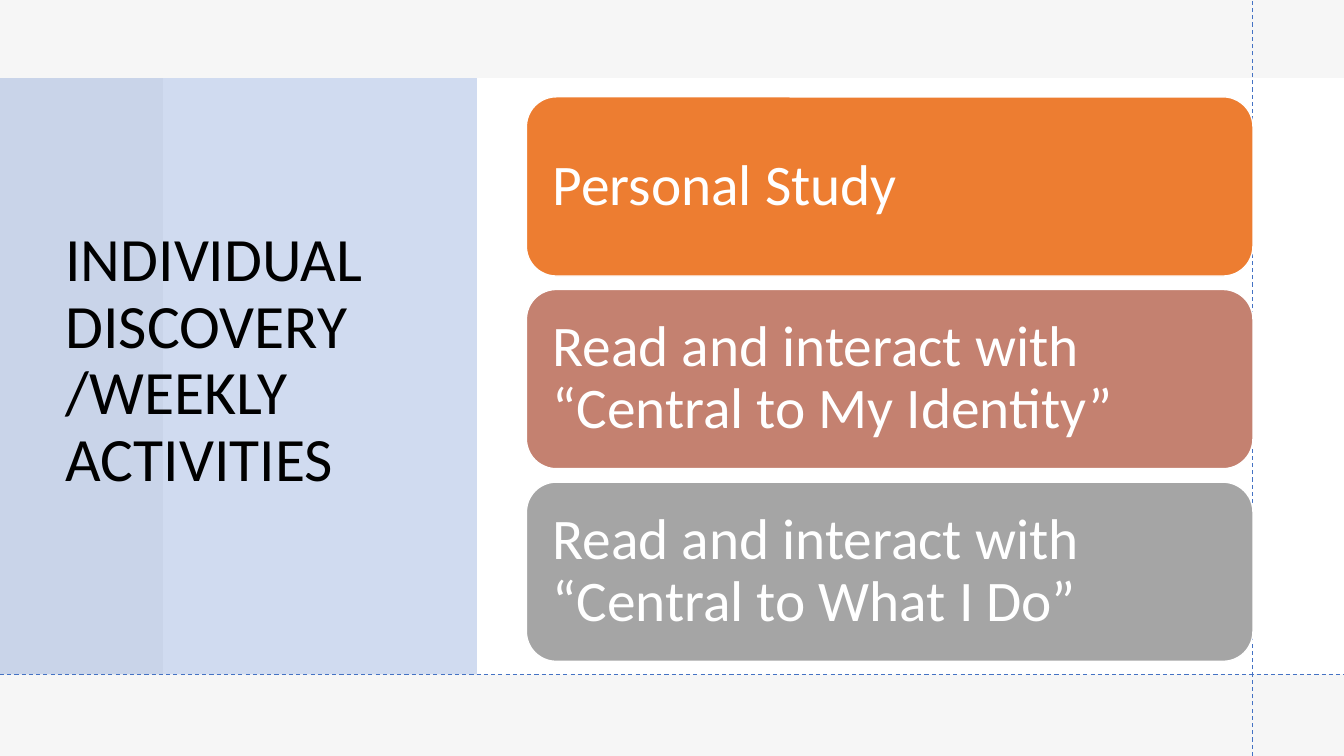
"""Build the weekly activities slide with a side title and three cards."""
import pptx
import pptx.util
import pptx.dml.color
import pptx.enum.dml
import pptx.enum.shapes
import pptx.enum.text
import pptx.oxml.ns
import lxml.etree

Pt = pptx.util.Pt
RGBColor = pptx.dml.color.RGBColor
SHAPES = pptx.enum.shapes.MSO_SHAPE

WHITE = RGBColor(0xFF, 0xFF, 0xFF)
BLACK = RGBColor(0x00, 0x00, 0x00)
PALE = RGBColor(0xE7, 0xE6, 0xE6)
BLUE = RGBColor(0x44, 0x72, 0xC4)
ORANGE = RGBColor(0xED, 0x7D, 0x31)
ROSE = RGBColor(0xC4, 0x81, 0x70)
GREY = RGBColor(0xA5, 0xA5, 0xA5)

WIDTH, HEIGHT = 960, 540
TITLE = "INDIVIDUAL DISCOVERY\v/WEEKLY ACTIVITIES"
TITLE_BOX = (39.6, 53.3, 284.4, 409.7)
PANELS = [
    ((0, 0, WIDTH, HEIGHT), WHITE, 100),
    ((0, 0, WIDTH, HEIGHT), PALE, 35),
    ((116.6, 55.8, 843.4, 426), WHITE, 100),
    ((0, 55.8, 340.6, 426), BLUE, 25),
]
GUIDES = [(894.7, HEIGHT, 894.7, 0), (0, 481.7, WIDTH, 481.7)]
CARDS = [
    ("Personal Study", ORANGE),
    ("Read and interact with “Central to My Identity”", ROSE),
    ("Read and interact with “Central to What I Do”", GREY),
]
CARD_LEFT, CARD_TOP, CARD_WIDTH, CARD_HEIGHT = 376, 69.2, 519, 128
CARD_PITCH = 137.6


def write(shape, text, size, color, inset_x, inset_y):
    """Put left-aligned, vertically centred text into a shape."""
    frame = shape.text_frame
    frame.word_wrap = True
    frame.auto_size = pptx.enum.text.MSO_AUTO_SIZE.NONE
    frame.vertical_anchor = pptx.enum.text.MSO_ANCHOR.MIDDLE
    frame.margin_left = frame.margin_right = Pt(inset_x)
    frame.margin_top = frame.margin_bottom = Pt(inset_y)
    para = frame.paragraphs[0]
    para.text = text
    para.alignment = pptx.enum.text.PP_ALIGN.LEFT
    para.line_spacing = 0.9
    for span in para.runs:
        span.font.name = "Calibri"
        span.font.size = Pt(size)
        span.font.color.rgb = color


def add_block(page, kind, place, color, opacity=100):
    """Add a filled shape without line or shadow."""
    block = page.shapes.add_shape(kind, *map(Pt, place))
    block.shadow.inherit = False
    block.line.fill.background()
    block.fill.solid()
    block.fill.fore_color.rgb = color
    if opacity < 100:
        tone = block.element.spPr.find(".//" + pptx.oxml.ns.qn("a:srgbClr"))
        alpha = lxml.etree.SubElement(tone, pptx.oxml.ns.qn("a:alpha"))
        alpha.set("val", str(opacity * 1000))
    return block


def add_guide(page, ends):
    """Add a thin dashed line."""
    guide = page.shapes.add_connector(
        pptx.enum.shapes.MSO_CONNECTOR.STRAIGHT, *map(Pt, ends))
    guide.line.color.rgb = BLUE
    guide.line.width = Pt(0.75)
    guide.line.dash_style = pptx.enum.dml.MSO_LINE.DASH
    lxml.etree.SubElement(guide.element.spPr, pptx.oxml.ns.qn("a:effectLst"))


def main():
    """Assemble the slide and save it."""
    deck = pptx.Presentation()
    deck.slide_width, deck.slide_height = Pt(WIDTH), Pt(HEIGHT)
    page = deck.slides.add_slide(deck.slide_layouts.get_by_name("Title Only"))
    page.background.fill.solid()
    page.background.fill.fore_color.rgb = PALE

    for place, color, opacity in PANELS:
        add_block(page, SHAPES.RECTANGLE, place, color, opacity)

    title = page.shapes.title
    title.left, title.top, title.width, title.height = map(Pt, TITLE_BOX)
    write(title, TITLE, size=44, color=BLACK, inset_x=7.2, inset_y=3.6)
    title.element.getparent().append(title.element)

    for ends in GUIDES:
        add_guide(page, ends)

    for index, (text, color) in enumerate(CARDS):
        place = (CARD_LEFT, CARD_TOP + index * CARD_PITCH,
                 CARD_WIDTH, CARD_HEIGHT)
        card = add_block(page, SHAPES.ROUNDED_RECTANGLE, place, color)
        card.line.color.rgb = WHITE
        card.line.width = Pt(1)
        write(card, text, size=41, color=WHITE, inset_x=12.5, inset_y=12.5)

    deck.save("out.pptx")


if __name__ == "__main__":
    main()
